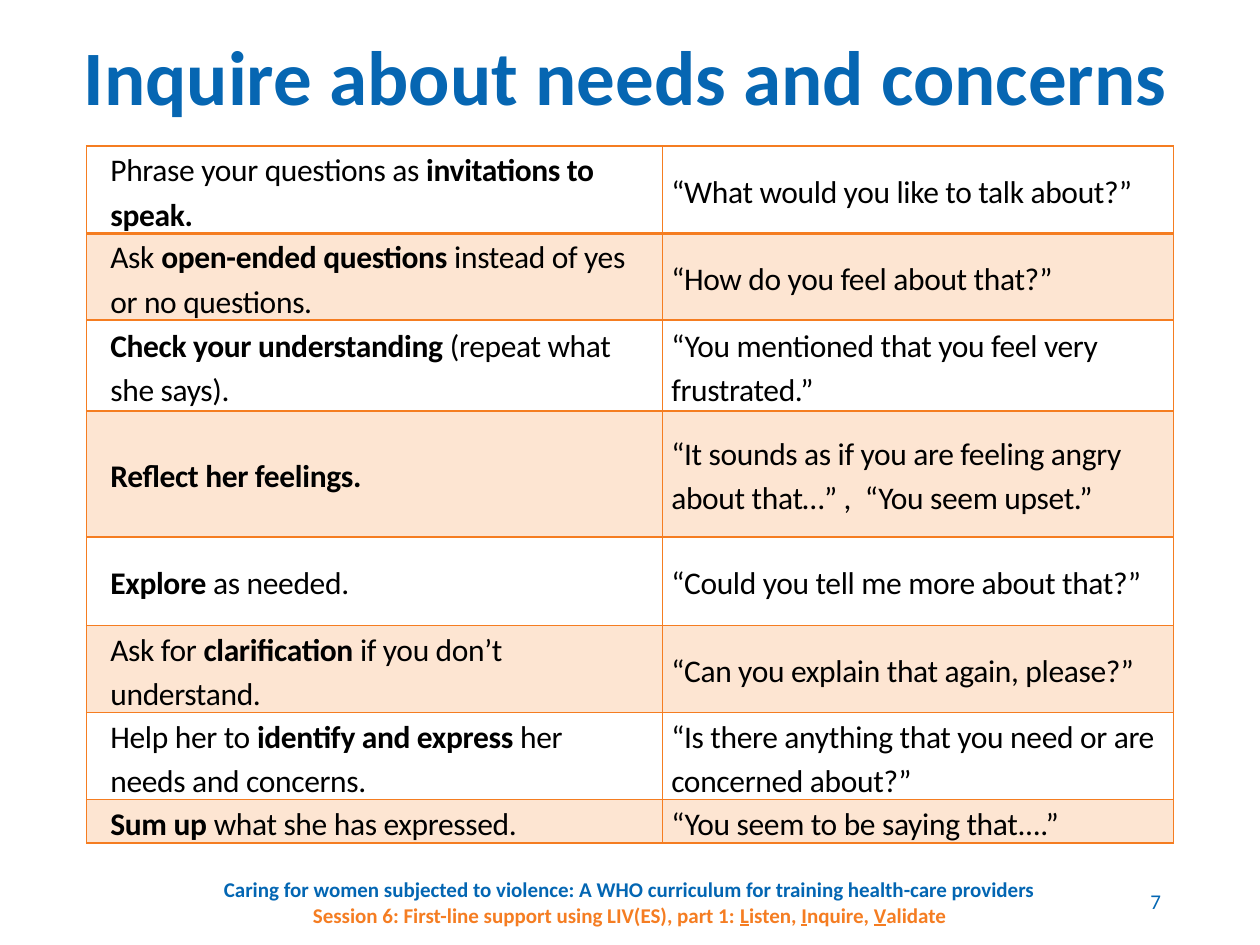
from lxml.etree import SubElement
from pptx import Presentation
from pptx.dml.color import RGBColor
from pptx.enum.text import MSO_ANCHOR, PP_ALIGN
from pptx.oxml import parse_xml
from pptx.oxml.ns import nsdecls, qn
from pptx.util import Pt

BLUE, ORANGE, BLACK, WHITE = "0366B3", "F57D21", "000000", "FFFFFF"
ROWS = [
    (47.5, ["Phrase your questions as ", "*invitations to speak."],
     "“What would you like to talk about?”"),
    (47.5, ["Ask ", "*open-ended questions ", "instead of yes or no questions."],
     "“How do you feel about that?”"),
    (52, ["*Check your understanding ", "(repeat what she says)."],
     "“You mentioned that you feel very frustrated.”"),
    (72, ["*Reflect her feelings."],
     "“It sounds as if you are feeling angry about that…” ,  “You seem upset.”"),
    (50.5, ["*Explore", " as needed."],
     "“Could you tell me more about that?”"),
    (47.5, ["Ask for ", "*clarification", " if you don’t understand."],
     "“Can you explain that again, please?”"),
    (47.5, ["Help her to ", "*identify and express ", "her ", "\n", "needs and concerns."],
     "“Is there anything that you need or are concerned about?”"),
    (23, ["*Sum up ", "what she has expressed."],
     "“You seem to be saying that....”"),
]


def rgb(value):
    return RGBColor.from_string(value)


def set_font(font, size, color, bold=None):
    font.name, font.size, font.bold = "Calibri", Pt(size), bold
    font.color.rgb = rgb(color)


def add_title(slide, box, text):
    sp = slide.shapes.title
    sp.left, sp.top, sp.width, sp.height = map(Pt, box)
    tf = sp.text_frame
    tf.text = text
    tf.vertical_anchor = MSO_ANCHOR.MIDDLE
    p = tf.paragraphs[0]
    p.alignment, p.line_spacing = PP_ALIGN.CENTER, 0.9
    set_font(p.font, 44, "0666B2", True)


def add_box(slide, box, align):
    tf = slide.shapes.add_textbox(*map(Pt, box)).text_frame
    tf.word_wrap = True
    tf.vertical_anchor = MSO_ANCHOR.MIDDLE
    p = tf.paragraphs[0]
    p.alignment = align
    return p


def set_borders(cell, bottom):
    widths = {"lnL": 1, "lnR": 1, "lnT": 1, "lnB": bottom}
    for i, (tag, width) in enumerate(widths.items()):
        cell._tc.get_or_add_tcPr().insert(i, parse_xml(
            f'<a:{tag} {nsdecls("a")} w="{Pt(width)}"><a:solidFill>'
            f'<a:srgbClr val="{ORANGE}"/></a:solidFill></a:{tag}>'))


def fill_cell(cell, row):
    cell.fill.solid()
    cell.fill.fore_color.rgb = rgb(ORANGE if row % 2 else WHITE)
    if row % 2:
        color = cell._tc.tcPr.find(".//" + qn("a:srgbClr"))
        SubElement(color, qn("a:alpha"), val="20000")


def write_cell(cell, parts, indent):
    cell.vertical_anchor = MSO_ANCHOR.MIDDLE
    cell.margin_left = cell.margin_right = Pt(5)
    cell.margin_top = cell.margin_bottom = 0
    p = cell.text_frame.paragraphs[0]
    p.line_spacing = 1.15
    p._p.get_or_add_pPr().set("marL", str(Pt(indent)))
    set_font(p.font, 18, BLACK)
    for part in parts:
        if part == "\n":
            p.add_line_break()
            continue
        r = p.add_run()
        r.text = part.lstrip("*")
        r.font.bold = part.startswith("*")
        r.font._element.set("spc", "-20")


def add_advice_table(slide, box):
    table = slide.shapes.add_table(len(ROWS), 2, *map(Pt, box)).table
    table.first_row = table.horz_banding = False
    for column, share in zip(table.columns, (0.53, 0.47)):
        column.width = Pt(box[2] * share)
    for i, (height, advice, example) in enumerate(ROWS):
        table.rows[i].height = Pt(height)
        for j, (parts, indent) in enumerate([(advice, 8.6), ([example], 0)]):
            cell = table.cell(i, j)
            write_cell(cell, parts, indent)
            fill_cell(cell, i)
            set_borders(cell, 1 if i else 2)


def add_footer(slide, box):
    p = add_box(slide, box, PP_ALIGN.CENTER)
    set_font(p.font, 12, BLUE, True)
    r = p.add_run()
    r.text = ("Caring for women subjected to violence: "
              "A WHO curriculum for training health-care providers")
    p.add_line_break()
    session = ["Session 6: First-line support using LIV(ES), part 1: ",
               "L", "isten, ", "I", "nquire, ", "V", "alidate"]
    for text in session:
        r = p.add_run()
        r.text = text
        r.font.color.rgb = rgb("F57D22")
        r.font.underline = len(text) == 1


def add_page_number(slide, box, number):
    p = add_box(slide, box, PP_ALIGN.RIGHT)
    p.text = number
    set_font(p.font, 12, BLUE)


def main():
    prs = Presentation()
    prs.slide_width, prs.slide_height = Pt(720), Pt(540)
    slide = prs.slides.add_slide(prs.slide_layouts[5])
    add_title(slide, (-4.5, -6, 724.5, 104.5), "Inquire about needs and concerns")
    add_page_number(slide, (631.5, 500.5, 39, 29), "7")
    add_advice_table(slide, (49.5, 83.5, 621, 391))
    add_footer(slide, (116, 494, 487.5, 43))
    prs.save("out.pptx")


if __name__ == "__main__":
    main()
